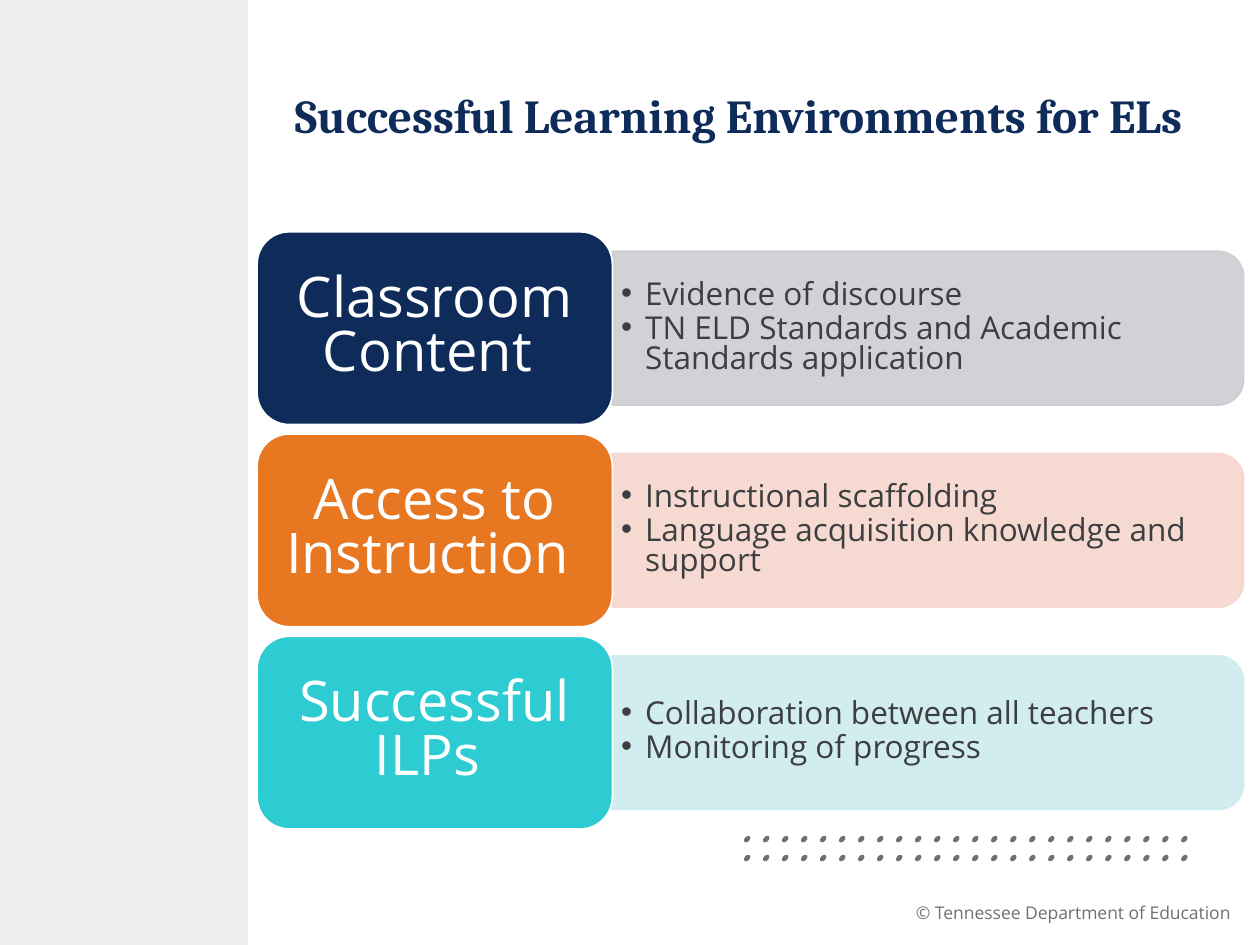
from dataclasses import dataclass
from typing import Any

from lxml.etree import SubElement
from pptx import Presentation
from pptx.dml.color import RGBColor
from pptx.enum.shapes import MSO_SHAPE as Shape
from pptx.enum.text import MSO_ANCHOR as Anchor, MSO_AUTO_SIZE as AutoSize, PP_ALIGN as Align
from pptx.oxml.ns import qn
from pptx.util import Inches, Pt

ROWS = [
    ("Classroom Content ", "0E2B5A", "CCCDD2",
     ["Evidence of discourse", "TN ELD Standards and Academic Standards application"]),
    ("Access to Instruction ", "E87722", "F6D6CD",
     ["Instructional scaffolding", "Language acquisition knowledge and support"]),
    ("Successful ILPs ", "2DCCD3", "CDECEF",
     ["Collaboration between all teachers", "Monitoring of progress"]),
]
FIRST_TOP, LAST_TOP = 1.84, 5.05
HEAD_LEFT, HEAD_WIDTH, HEAD_HEIGHT = 2.04, 2.82, 1.53
BAR_LENGTH, BAR_DEPTH = 5.01, 1.22
DOT_COLUMNS, FIRST_DOT, LAST_DOT = 24, 5.9, 9.37


def color(hex_value):
    return RGBColor.from_string(hex_value)


def set_alpha(fill_parent, percent):
    for solid in fill_parent.iter(qn("a:solidFill")):
        SubElement(solid[0], qn("a:alpha"), val=str(percent * 1000))


def add_bullet(paragraph, indent):
    props = paragraph._p.get_or_add_pPr()
    props.set("marL", str(Inches(indent)))
    props.set("indent", str(-Inches(indent)))
    SubElement(props, qn("a:buFont"), typeface="Arial")
    SubElement(props, qn("a:buChar"), char="•")


def write(frame, *lines, font="Open Sans", size=18, ink="3C3E40", bold=False, align=Align.LEFT,
          anchor=Anchor.MIDDLE, spacing=1.0, after=0, insets=(0.1, 0.05), bullet_indent=None):
    frame.word_wrap = True
    frame.auto_size = AutoSize.NONE
    frame.vertical_anchor = anchor
    frame.margin_left = frame.margin_right = Inches(insets[0])
    frame.margin_top = frame.margin_bottom = Inches(insets[1])
    for number, line in enumerate(lines):
        paragraph = frame.add_paragraph() if number else frame.paragraphs[0]
        paragraph.text = line
        paragraph.alignment = align
        paragraph.line_spacing = spacing
        paragraph.space_before = Pt(0)
        paragraph.space_after = Pt(after)
        if bullet_indent:
            add_bullet(paragraph, bullet_indent)
        style = paragraph.runs[0].font
        style.name, style.size, style.bold = font, Pt(size), bold
        style.color.rgb = color(ink)


@dataclass
class SlideBuilder:
    slide: Any
    navy: str = "0E2B5A"
    gray: str = "6E7073"
    white: str = "FFFFFF"

    def title(self, text, left, top, width, height):
        title = self.slide.shapes.title
        title.left, title.top = Inches(left), Inches(top)
        title.width, title.height = Inches(width), Inches(height)
        write(title.text_frame, text, font="Cambria", size=27, ink=self.navy, bold=True)

    def shape(self, kind, left, top, width, height, fill, line=None, rotation=0):
        shape = self.slide.shapes.add_shape(
            kind, Inches(left), Inches(top), Inches(width), Inches(height))
        shape.shadow.inherit = False
        shape.rotation = rotation
        shape.fill.solid()
        shape.fill.fore_color.rgb = color(fill)
        if line:
            shape.line.color.rgb = color(line)
            shape.line.width = Pt(1)
        else:
            shape.line.fill.background()
        return shape

    def text(self, lines, left, top, width, height, **style):
        box = self.slide.shapes.add_textbox(
            Inches(left), Inches(top), Inches(width), Inches(height))
        write(box.text_frame, *lines, **style)

    def dots(self):
        step = (LAST_DOT - FIRST_DOT) / (DOT_COLUMNS - 1)
        for top in (6.64, 6.79):
            for column in range(DOT_COLUMNS):
                self.shape(Shape.OVAL, FIRST_DOT + column * step, top, 0.06, 0.04,
                           self.gray, rotation=314.4)

    def row(self, top, heading, strong, pale, points):
        middle = top + HEAD_HEIGHT / 2
        bar_left = HEAD_LEFT + HEAD_WIDTH
        # The bar is upright before its quarter turn
        bar = self.shape(Shape.ROUND_2_SAME_RECTANGLE,
                         bar_left + (BAR_LENGTH - BAR_DEPTH) / 2, middle - BAR_LENGTH / 2,
                         BAR_DEPTH, BAR_LENGTH, pale, line=pale, rotation=90)
        set_alpha(bar._element.spPr, 90)
        self.text(points, bar_left, middle - 0.55, 4.95, 1.1, spacing=0.8, after=2,
                  insets=(0.07, 0.04), bullet_indent=0.19)
        head = self.shape(Shape.ROUNDED_RECTANGLE, HEAD_LEFT, top, HEAD_WIDTH, HEAD_HEIGHT,
                          strong, line=self.white)
        write(head.text_frame, heading, size=32, ink=self.white, align=Align.CENTER,
              spacing=0.8, insets=(0.13, 0.07))


def main():
    deck = Presentation()
    deck.slide_width, deck.slide_height = Inches(10), Inches(7.5)
    builder = SlideBuilder(deck.slides.add_slide(deck.slide_layouts[5]))

    # Side band, copyright line and dotted strip
    builder.shape(Shape.RECTANGLE, 0, 0, 1.97, 7.5, "EEEEEE")
    builder.text(["© Tennessee Department of Education "], 6.77, 7.13, 3.13, 0.25, size=10,
                 ink=builder.gray, align=Align.RIGHT, anchor=Anchor.TOP, spacing=0.9)
    builder.dots()

    # Title
    builder.title("Successful Learning Environments for ELs", 2.24, 0.25, 7.37, 1.32)

    # Headed rows of points
    step = (LAST_TOP - FIRST_TOP) / (len(ROWS) - 1)
    for number, row in enumerate(ROWS):
        builder.row(FIRST_TOP + number * step, *row)

    deck.save("out.pptx")


if __name__ == "__main__":
    main()
